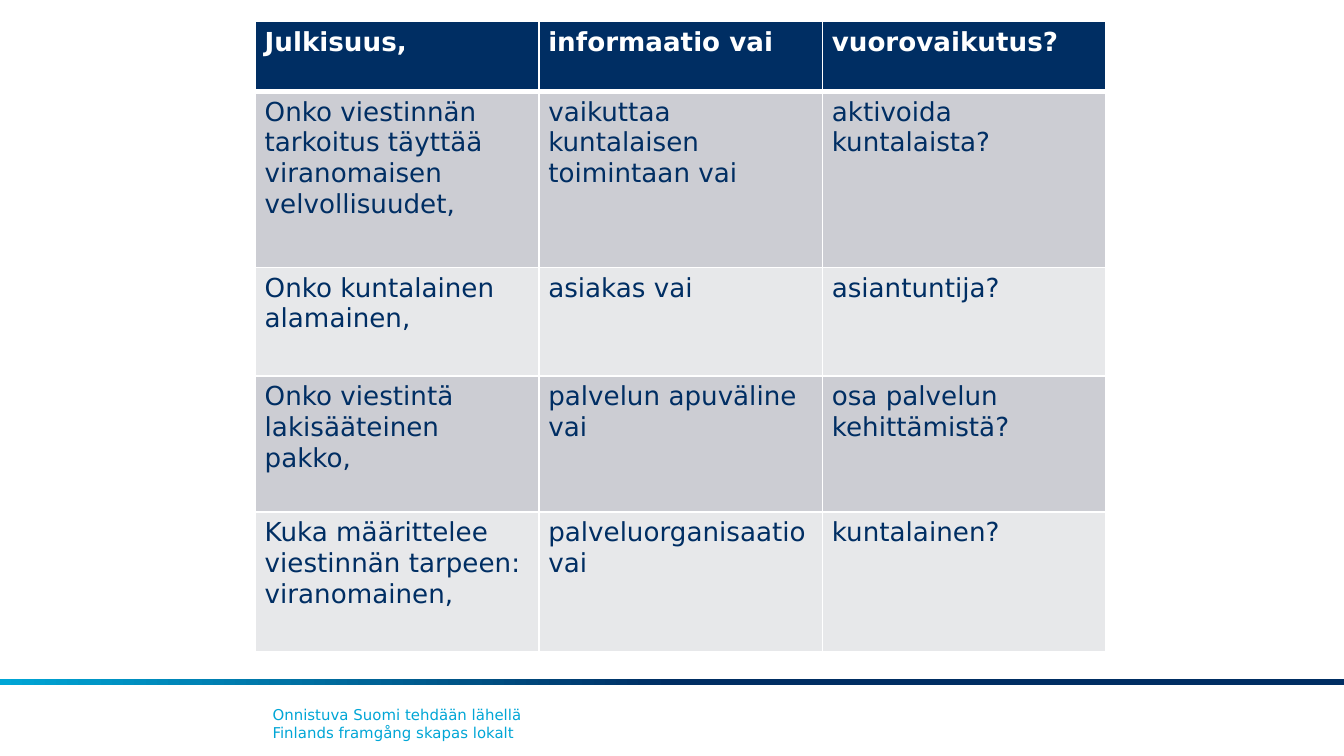
from lxml.etree import SubElement
from pptx import Presentation
from pptx.dml.color import RGBColor
from pptx.enum.shapes import MSO_SHAPE
from pptx.oxml.ns import qn
from pptx.util import Inches, Pt

FONT = "DejaVu Sans"
NAVY, CYAN, WHITE = "002E63", "00A6D6", "FFFFFF"
BANDS = ["CCCDD3", "E7E8EA"]

ROWS = [
    ("Julkisuus,", "informaatio vai", "vuorovaikutus?"),
    ("Onko viestinnän tarkoitus täyttää viranomaisen velvollisuudet,",
     "vaikuttaa kuntalaisen toimintaan vai", "aktivoida kuntalaista?"),
    ("Onko kuntalainen alamainen,", "asiakas vai", "asiantuntija?"),
    ("Onko viestintä lakisääteinen pakko,", "palvelun apuväline vai",
     "osa palvelun kehittämistä?"),
    ("Kuka määrittelee viestinnän tarpeen: viranomainen,",
     "palveluorganisaatio vai", "kuntalainen?"),
]
ROW_HEIGHTS = [0.52, 1.31, 0.81, 1.01, 1.04]
COLUMN_WIDTH = 2.11
FOOTER = ["Onnistuva Suomi tehdään lähellä", "Finlands framgång skapas lokalt"]


def rgb(color):
    return RGBColor.from_string(color)


def style(paragraph, size, color, bold=False):
    for r in paragraph.runs:
        r.font.name = FONT
        r.font.size = Pt(size)
        r.font.bold = bold
        r.font.color.rgb = rgb(color)


def add_borders(cell, top, bottom):
    """Draw white borders; call before filling, as the XML order matters."""
    tcPr = cell._tc.get_or_add_tcPr()
    for side, width in (("L", 1), ("R", 1), ("T", top), ("B", bottom)):
        ln = SubElement(tcPr, qn(f"a:ln{side}"), w=str(Pt(width)))
        SubElement(SubElement(ln, qn("a:solidFill")), qn("a:srgbClr"), val=WHITE)


def add_table(s):
    columns = len(ROWS[0])
    table = s.shapes.add_table(
        len(ROWS), columns, Inches(1.9), Inches(0.16),
        Inches(COLUMN_WIDTH * columns), Inches(sum(ROW_HEIGHTS))).table
    for column in table.columns:
        column.width = Inches(COLUMN_WIDTH)
    for i, (texts, height) in enumerate(zip(ROWS, ROW_HEIGHTS)):
        table.rows[i].height = Inches(height)
        header = i == 0
        for j, text in enumerate(texts):
            cell = table.cell(i, j)
            cell.margin_left = cell.margin_right = Inches(0.07)
            cell.margin_top = cell.margin_bottom = Inches(0.04)
            add_borders(cell, top=3 if i == 1 else 1, bottom=3 if header else 1)
            cell.fill.solid()
            cell.fill.fore_color.rgb = rgb(NAVY if header else BANDS[(i - 1) % 2])
            p = cell.text_frame.paragraphs[0]
            p.text = text
            style(p, 14, WHITE if header else NAVY, bold=header)


def add_footer(s):
    bar = s.shapes.add_shape(MSO_SHAPE.RECTANGLE, 0, Inches(5.05),
                             Inches(10), Inches(0.05))
    bar.shadow.inherit = False
    bar.line.fill.background()
    bar.fill.gradient()
    bar.fill.gradient_angle = 180
    for stop, (position, color) in zip(bar.fill.gradient_stops,
                                       [(0.5, NAVY), (1, CYAN)]):
        stop.position = position
        stop.color.rgb = rgb(color)

    tf = s.shapes.add_textbox(Inches(1.93), Inches(5.2),
                              Inches(6.54), Inches(0.37)).text_frame
    tf.word_wrap = True
    p = tf.paragraphs[0]
    p.text = "\v".join(FOOTER)
    style(p, 8, CYAN)


prs = Presentation()
prs.slide_width = Inches(10)
prs.slide_height = prs.slide_width * 9 // 16
s = prs.slides.add_slide(prs.slide_layouts[6])
add_footer(s)
add_table(s)
prs.save("out.pptx")
